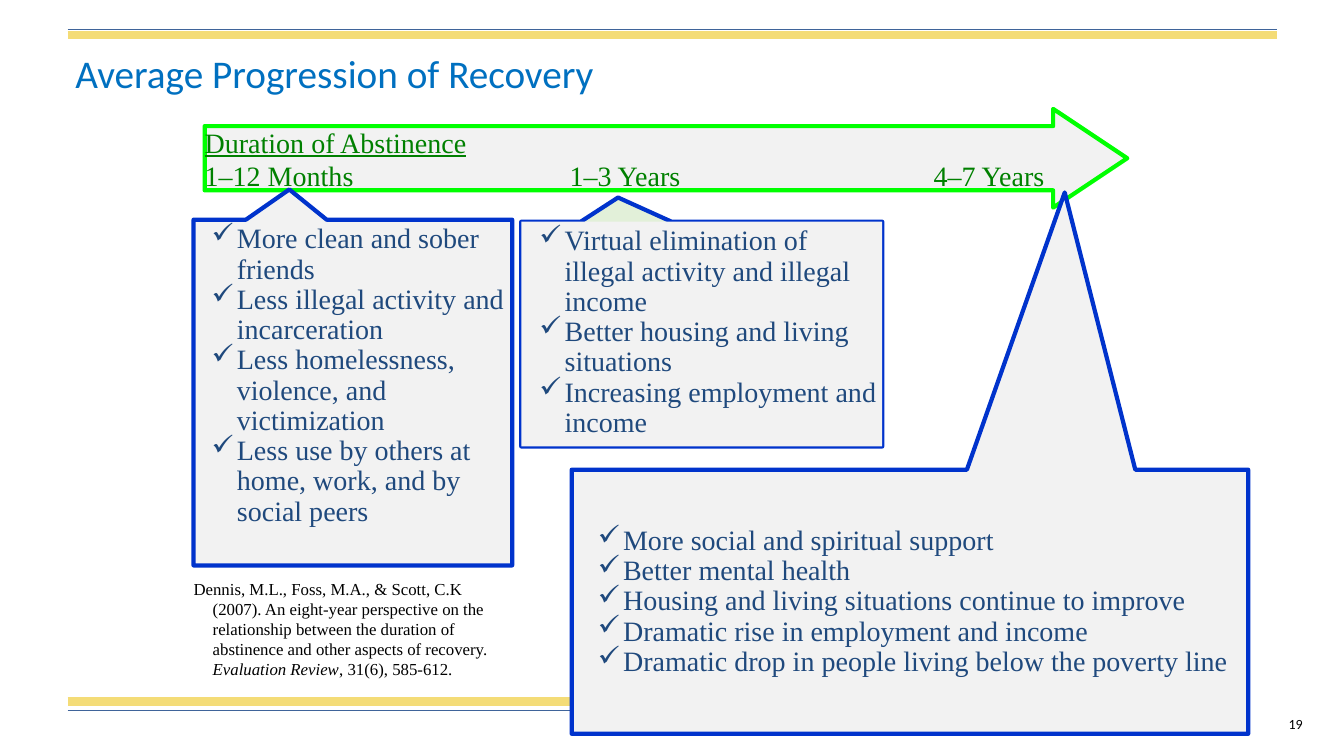
"""Build the slide on the average progression of recovery."""
from lxml import etree
from pptx import Presentation, util as u
from pptx.dml.color import RGBColor
from pptx.enum import shapes, text
from pptx.oxml.ns import qn

SERIF, SANS = "Times New Roman", "Calibri"
GREY, BLUE, NAVY, GREEN = "F2F2F2", "0033CC", "1F497D", "008000"
TITLE = "Average Progression of Recovery"
RULES = [
    (0.35, 12.67, "F4DC77", 6),
    (6.96, 9.01, "F4DC77", 6),
    (0.29, 12.67, "3F649A", 1),
    (7.05, 9.01, "3F649A", 1),
]
TIMELINE = ["Duration of Abstinence", "1–12 Months\t1–3 Years\t4–7 Years"]
TIMELINE_TABS = [3.62, 7.23]
CITATION = [
    "Dennis, M.L., Foss, M.A., & Scott, C.K (2007). An eight-year perspective on the "
    "relationship between the duration of abstinence and other aspects of recovery. ",
    "Evaluation Review",
    ", 31(6), 585-612.",
]
CALLOUTS = [
    {
        "box": (5.67, 4.66, 12.38, 7.28),
        "pointer": [(9.59, 4.66), (10.56, 1.91), (11.26, 4.66)],
        "fill": GREY, "area": (5.8, 4.9, 6.43, 2.14), "area_fill": GREY,
        "inset": 0, "anchor": text.MSO_ANCHOR.MIDDLE,
        "items": [
            "More social and spiritual support",
            "Better mental health",
            "Housing and living situations continue to improve",
            "Dramatic rise in employment and income",
            "Dramatic drop in people living below the poverty line",
        ],
    },
    {
        "box": (5.17, 2.2, 8.75, 4.43),
        "pointer": [(5.76, 2.2), (6.13, 1.96), (6.66, 2.2)],
        "fill": "E2F0D9", "area": (5.17, 2.2, 3.58, 2.23), "area_fill": GREY,
        "inset": 0.05, "anchor": text.MSO_ANCHOR.TOP,
        "items": [
            "Virtual elimination of illegal activity and illegal income",
            "Better housing and living situations",
            "Increasing employment and income",
        ],
    },
    {
        "box": (1.92, 2.18, 5.08, 5.61),
        "pointer": [(2.44, 2.18), (2.87, 1.88), (3.24, 2.18)],
        "fill": GREY, "area": (1.92, 2.18, 3.17, 3.13), "area_fill": None,
        "inset": 0.05, "anchor": text.MSO_ANCHOR.TOP,
        "items": [
            "More clean and sober friends",
            "Less illegal activity and incarceration",
            "Less homelessness, violence, and victimization",
            "Less use by others at home, work, and by social peers",
        ],
    },
]


def paint(fill, color):
    fill.solid()
    fill.fore_color.rgb = RGBColor.from_string(color)


def outline(shape, fill, line):
    shape.shadow.inherit = False
    paint(shape.fill, fill)
    paint(shape.line.fill, line)
    shape.line.width = u.Pt(3)


def style(paragraph, font, size, color):
    for run in paragraph.runs:
        run.font.name, run.font.size = font, u.Pt(size)
        run.font.color.rgb = RGBColor.from_string(color)


def indent(paragraph, left, hanging):
    properties = paragraph._p.get_or_add_pPr()
    properties.set("marL", str(u.Inches(left)))
    properties.set("indent", str(-u.Inches(hanging)))
    return properties


def add_bullet(paragraph):
    properties = indent(paragraph, 0.38, 0.25)
    color = etree.SubElement(properties, qn("a:buClr"))
    etree.SubElement(color, qn("a:srgbClr"), val=NAVY)
    etree.SubElement(properties, qn("a:buChar"), char="✓")


def add_tabs(paragraph, stops):
    tabs = etree.SubElement(paragraph._p.get_or_add_pPr(), qn("a:tabLst"))
    for stop in stops:
        etree.SubElement(tabs, qn("a:tab"), pos=str(u.Inches(stop)), algn="l")


def add_text(slide, area, lines, font, size, color, inset=0.05,
             anchor=text.MSO_ANCHOR.TOP):
    shape = slide.shapes.add_textbox(*map(u.Inches, area))
    frame = shape.text_frame
    frame.word_wrap, frame.vertical_anchor = True, anchor
    frame.margin_left = frame.margin_right = u.Inches(inset)
    frame.margin_top = frame.margin_bottom = u.Inches(inset)
    frame.text = "\n".join(lines)
    for paragraph in frame.paragraphs:
        style(paragraph, font, size, color)
    return shape


def add_rule(slide, y, right, color, width):
    rule = slide.shapes.add_connector(
        shapes.MSO_CONNECTOR.STRAIGHT, *map(u.Inches, (0.67, y, right, y)))
    paint(rule.line.fill, color)
    rule.line.width = u.Pt(width)
    etree.SubElement(rule._element.spPr, qn("a:effectLst"))


def add_citation(slide):
    shape = add_text(slide, (1.87, 5.69, 3.23, 1.14), CITATION[:1], SERIF, 12, "000000")
    paragraph = shape.text_frame.paragraphs[0]
    indent(paragraph, 0.19, 0.19)
    for part in CITATION[1:]:
        paragraph.add_run().text = part
    style(paragraph, SERIF, 12, "000000")
    paragraph.runs[1].font.italic = True


def add_timeline(slide):
    arrow = slide.shapes.add_shape(
        shapes.MSO_SHAPE.RIGHT_ARROW, *map(u.Inches, (2.03, 1.08, 9.15, 0.98)))
    arrow.adjustments[0], arrow.adjustments[1] = 0.65, 0.75
    outline(arrow, GREY, "00FF00")
    label = add_text(slide, (2.03, 1.24, 8.5, 0.67), TIMELINE, SERIF, 20, GREEN,
                     0, text.MSO_ANCHOR.MIDDLE)
    heading, periods = label.text_frame.paragraphs
    heading.runs[0].font.underline = True
    add_tabs(periods, TIMELINE_TABS)


def add_callout(slide, callout):
    left, top, right, bottom = callout["box"]
    corners = callout["pointer"] + [(right, top), (right, bottom), (left, bottom)]
    builder = slide.shapes.build_freeform(u.Inches(left), u.Inches(top))
    builder.add_line_segments([(u.Inches(x), u.Inches(y)) for x, y in corners], close=True)
    outline(builder.convert_to_shape(), callout["fill"], BLUE)
    panel = add_text(slide, callout["area"], callout["items"], SERIF, 20, NAVY,
                     callout["inset"], callout["anchor"])
    if callout["area_fill"]:
        paint(panel.fill, callout["area_fill"])
    for paragraph in panel.text_frame.paragraphs:
        add_bullet(paragraph)
        paragraph.line_spacing = 0.9


def main():
    presentation = Presentation()
    presentation.slide_width, presentation.slide_height = u.Inches(13.33), u.Inches(7.5)
    slide = presentation.slides.add_slide(presentation.slide_layouts[6])
    for rule in RULES:
        add_rule(slide, *rule)
    number = add_text(slide, (12.16, 7.05, 0.86, 0.27), ["19"], SANS, 10, "000000")
    number.text_frame.margin_right = u.Inches(0.1)
    number.text_frame.paragraphs[0].alignment = text.PP_ALIGN.RIGHT
    add_citation(slide)
    add_timeline(slide)
    for callout in CALLOUTS:
        add_callout(slide, callout)
    title = add_text(slide, (0.65, 0.03, 12.03, 1.45), [TITLE], SANS, 28, "0070C0",
                     0.1, text.MSO_ANCHOR.MIDDLE)
    title.text_frame.paragraphs[0].line_spacing = 0.9
    presentation.save("out.pptx")


if __name__ == "__main__":
    main()
